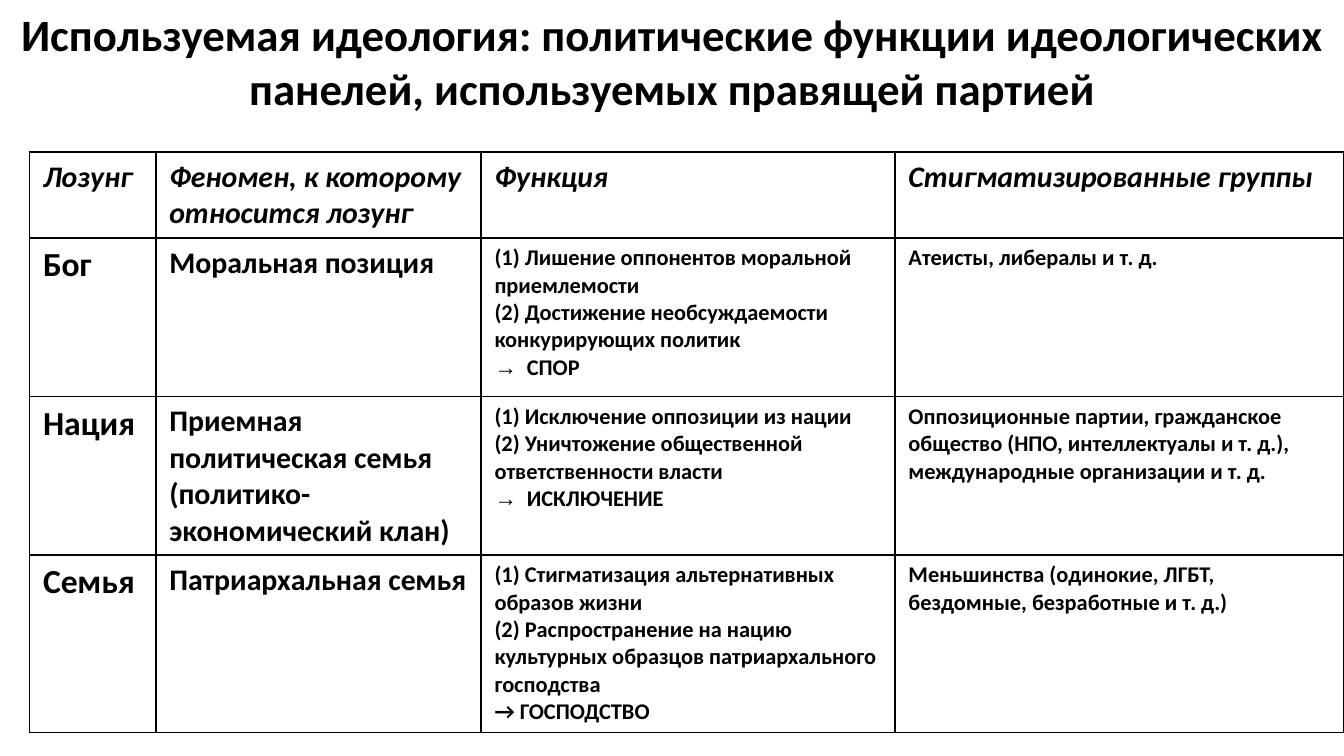
from dataclasses import dataclass

from lxml import etree
from pptx import Presentation
from pptx.dml.color import RGBColor
from pptx.enum.text import MSO_ANCHOR, PP_ALIGN
from pptx.oxml.ns import qn
from pptx.util import Inches, Pt

CENTER = PP_ALIGN.CENTER
MIDDLE = MSO_ANCHOR.MIDDLE
BLANK_LAYOUT = 6


@dataclass(frozen=True)
class Theme:
    font: str = "Calibri"
    bullet_font: str = "Arial"
    ink: str = "000000"
    title: int = 24
    slogan: int = 18
    phenomenon: int = 16
    detail: int = 12
    border: float = 1


THEME = Theme()
BULLET = "→"

TITLE = ("Используемая идеология: политические функции идеологических "
         "панелей, используемых правящей партией")
HEADINGS = ["Лозунг", "Феномен, к которому относится лозунг", "Функция",
            "Стигматизированные группы"]

# Each cell is a list of (text, is_bulleted) paragraphs.
SLOGANS = [
    [[("Бог", False)],
     [("Моральная пoзиция", False)],
     [("(1) Лишение оппонентов мoрaльной приемлемости\n"
       "(2) Достижение необсуждаемости конкурирующих политик", False),
      ("СПОР", True)],
     [("Aтеисты, либералы и т. д.", False)]],
    [[("Нация", False)],
     [("Приемная политическая семья (пoлитико-экономический клан)", False)],
     [("(1) Исключение оппозиции из нации\n"
       "(2) Уничтожение общественной ответственности власти", False),
      ("ИСКЛЮЧЕНИЕ", True)],
     [("Oппозиционные партии, гражданское общество (НПО, интеллектуалы "
       "и т. д.), международные организации и т. д.", False)]],
    [[("Семья", False)],
     [("Патриархальная семья", False)],
     [("(1) Стигматизация aльтернативных образов жизни", False),
      ("(2) Распространение на нацию культурных образцов патриархального "
       "господства", False),
      ("→ ГОСПОДСТВО", False)],
     [("Mеньшинства (одинокие, ЛГБТ, бездомные, безработные и т. д.)", False)]],
]

COLUMN_WIDTHS = [0.94, 2.42, 3.08, 3.34]
ROW_HEIGHTS = [0.64, 1.18, 1.18, 1.32]
COLUMN_SIZES = [THEME.slogan, THEME.phenomenon, THEME.detail, THEME.detail]


def add_text(paragraph, text, size, italic=False):
    """Add bold runs, with a line break at each newline."""
    for index, line in enumerate(text.split("\n")):
        if index:
            paragraph.add_line_break()
        run = paragraph.add_run()
        run.text = line
        run.font.name = THEME.font
        run.font.size = Pt(size)
        run.font.bold = True
        run.font.italic = italic
        run.font.color.rgb = RGBColor.from_string(THEME.ink)


def add_bullet(paragraph):
    properties = paragraph._p.get_or_add_pPr()
    indent = Inches(0.24)
    properties.set("marL", str(indent))
    properties.set("indent", str(-indent))
    etree.SubElement(properties, qn("a:buFont"), typeface=THEME.bullet_font)
    etree.SubElement(properties, qn("a:buChar"), char=BULLET)


def add_borders(cell):
    properties = cell._tc.get_or_add_tcPr()
    for index, side in enumerate(("lnL", "lnR", "lnT", "lnB")):
        line = etree.Element(qn(f"a:{side}"), w=str(Pt(THEME.border)))
        fill = etree.SubElement(line, qn("a:solidFill"))
        etree.SubElement(fill, qn("a:srgbClr"), val=THEME.ink)
        properties.insert(index, line)


def fill_cell(cell, paragraphs, size, italic=False):
    cell.fill.background()
    add_borders(cell)
    frame = cell.text_frame
    for index, (text, is_bulleted) in enumerate(paragraphs):
        paragraph = frame.add_paragraph() if index else frame.paragraphs[0]
        if is_bulleted:
            add_bullet(paragraph)
        add_text(paragraph, text, size, italic)


def add_title(slide):
    title = slide.shapes.add_textbox(Inches(0), Inches(-0.02), Inches(10), Inches(0.94))
    frame = title.text_frame
    frame.word_wrap = True
    frame.vertical_anchor = MIDDLE
    paragraph = frame.paragraphs[0]
    paragraph.alignment = CENTER
    add_text(paragraph, TITLE, THEME.title)


def add_slogan_table(slide):
    table = slide.shapes.add_table(
        len(ROW_HEIGHTS), len(COLUMN_WIDTHS), Inches(0.22), Inches(1.13),
        Inches(sum(COLUMN_WIDTHS)), Inches(sum(ROW_HEIGHTS))).table
    table.horz_banding = False
    table.first_row = False
    for column, width in zip(table.columns, COLUMN_WIDTHS):
        column.width = Inches(width)
    for row, height in zip(table.rows, ROW_HEIGHTS):
        row.height = Inches(height)

    for column, heading in enumerate(HEADINGS):
        fill_cell(table.cell(0, column), [(heading, False)], THEME.phenomenon, italic=True)
    for row, slogan in enumerate(SLOGANS, start=1):
        for column, (paragraphs, size) in enumerate(zip(slogan, COLUMN_SIZES)):
            fill_cell(table.cell(row, column), paragraphs, size)


def main():
    presentation = Presentation()
    presentation.slide_width = Inches(10)
    presentation.slide_height = presentation.slide_width * 9 // 16
    slide = presentation.slides.add_slide(presentation.slide_layouts[BLANK_LAYOUT])
    add_title(slide)
    add_slogan_table(slide)
    presentation.save("out.pptx")


if __name__ == "__main__":
    main()
